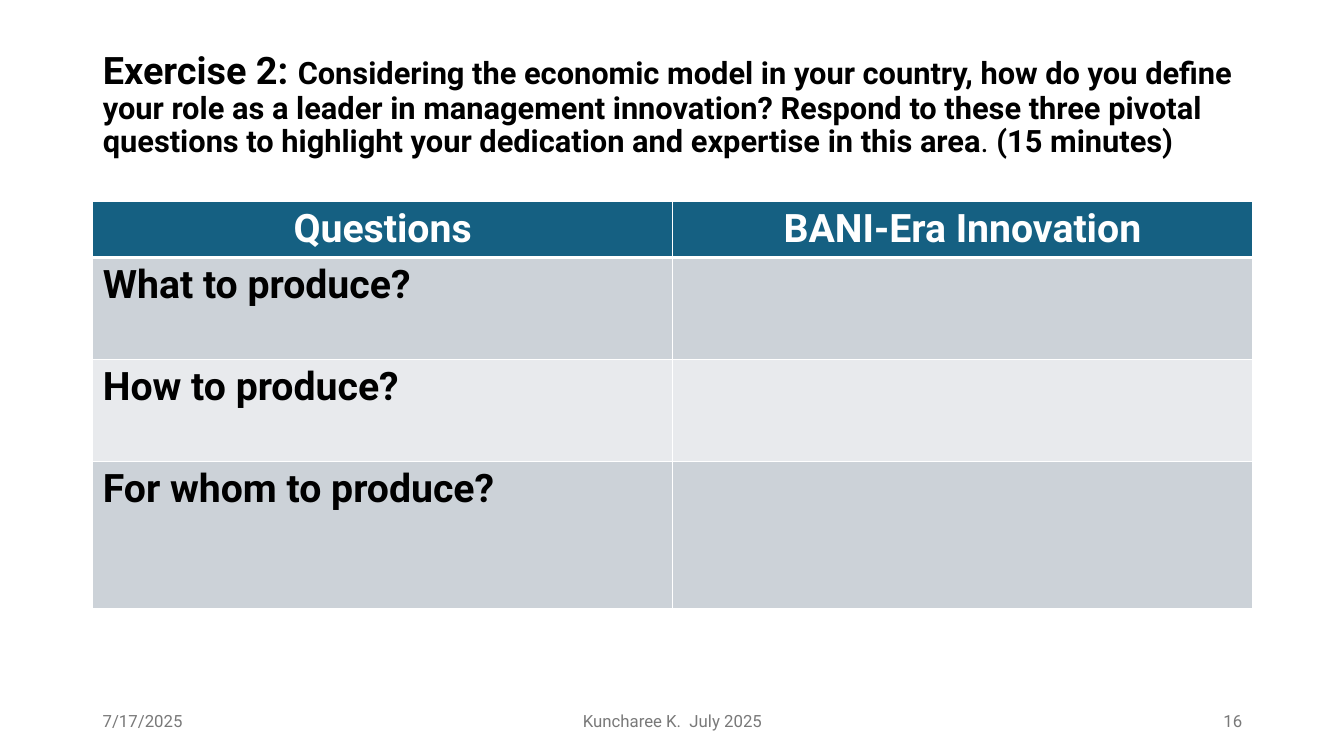
"""Build the exercise slide with its question table and footer line."""
from dataclasses import dataclass

from lxml import etree
from pptx import Presentation
from pptx.dml.color import RGBColor
from pptx.enum.text import MSO_ANCHOR, MSO_AUTO_SIZE, PP_ALIGN
from pptx.oxml.ns import qn
from pptx.util import Inches, Pt

LEFT, CENTER, RIGHT = PP_ALIGN.LEFT, PP_ALIGN.CENTER, PP_ALIGN.RIGHT
MIDDLE = MSO_ANCHOR.MIDDLE
FIXED_SIZE = MSO_AUTO_SIZE.NONE

FONT = "Roboto"
COLORS = {
    "ink": "000000",
    "white": "FFFFFF",
    "header": "156082",
    "band_dark": "CCD2D8",
    "band_light": "E8EAED",
    "footer": "797979",
}
MARGIN, COLUMN, ROW = 0.92, 0.5, 0.1
CONTENT_COLUMNS = 23
HEADER_BORDER, GRID_BORDER = 3, 1


@dataclass(frozen=True)
class Phrase:
    text: str
    size: float
    color: str = "ink"
    bold: bool = True


@dataclass(frozen=True)
class TableRow:
    cells: tuple[str, str]
    rows: float
    fill: str
    color: str = "ink"
    align: PP_ALIGN = LEFT


@dataclass(frozen=True)
class FooterItem:
    text: str
    column: float
    columns: float
    align: PP_ALIGN


EXERCISE = (
    Phrase("Exercise 2: ", 27),
    Phrase(
        "Considering the economic model in your country, how do you define "
        "your role as a leader in management innovation? Respond to these three "
        "pivotal questions to highlight your dedication and expertise in this area",
        22,
    ),
    Phrase(". ", 22, bold=False),
    Phrase("(15 minutes)", 22),
)
QUESTIONS = (
    TableRow(("Questions", "BANI-Era Innovation"), 5.5, "header", "white", CENTER),
    TableRow(("What to produce?", ""), 10.1, "band_dark"),
    TableRow(("How to produce?", ""), 10.1, "band_light"),
    TableRow(("For whom to produce?", ""), 14.6, "band_dark"),
)
FOOTER = (
    FooterItem("7/17/2025", 0, 6, LEFT),
    FooterItem("Kuncharee K.  July 2025", 7, 9, CENTER),
    FooterItem("16", 17, 6, RIGHT),
)


def grid_box(column: float, row: float, columns: float, rows: float) -> tuple:
    """Turn grid units into left, top, width and height."""
    return (
        Inches(MARGIN + column * COLUMN),
        Inches(row * ROW),
        Inches(columns * COLUMN),
        Inches(rows * ROW),
    )


def add_phrase(paragraph, phrase: Phrase) -> None:
    """Append one formatted run."""
    run = paragraph.add_run()
    run.text = phrase.text
    run.font.name = FONT
    run.font.size = Pt(phrase.size)
    run.font.bold = phrase.bold
    run.font.color.rgb = RGBColor.from_string(COLORS[phrase.color])


def add_exercise(slide) -> None:
    """Fill the title placeholder with the exercise."""
    exercise = slide.shapes.title
    exercise.left, exercise.top, exercise.width, exercise.height = grid_box(
        0, 4, CONTENT_COLUMNS, 12.9
    )
    frame = exercise.text_frame
    frame.word_wrap = True
    frame.auto_size = FIXED_SIZE
    frame.vertical_anchor = MIDDLE
    sentence = frame.paragraphs[0]
    sentence.alignment = LEFT
    sentence.line_spacing = 0.9
    for phrase in EXERCISE:
        add_phrase(sentence, phrase)


def set_borders(cell, top: float, bottom: float) -> None:
    """Draw white borders on all four sides of a cell."""
    properties = cell._tc.get_or_add_tcPr()
    widths = {"a:lnL": GRID_BORDER, "a:lnR": GRID_BORDER, "a:lnT": top, "a:lnB": bottom}
    for position, (side, width) in enumerate(widths.items()):
        border = etree.Element(qn(side), w=str(Pt(width)))
        paint = etree.SubElement(border, qn("a:solidFill"))
        etree.SubElement(paint, qn("a:srgbClr"), val=COLORS["white"])
        properties.insert(position, border)


def add_questions(slide) -> None:
    """Add the table of questions."""
    total_rows = sum(entry.rows for entry in QUESTIONS)
    questions = slide.shapes.add_table(
        len(QUESTIONS), 2, *grid_box(0, 20, CONTENT_COLUMNS, total_rows)
    ).table
    for index, entry in enumerate(QUESTIONS):
        questions.rows[index].height = Inches(entry.rows * ROW)
        top = HEADER_BORDER if index == 1 else GRID_BORDER
        bottom = HEADER_BORDER if index == 0 else GRID_BORDER
        for cell, text in zip(questions.rows[index].cells, entry.cells):
            cell.fill.solid()
            cell.fill.fore_color.rgb = RGBColor.from_string(COLORS[entry.fill])
            set_borders(cell, top, bottom)
            if text:
                paragraph = cell.text_frame.paragraphs[0]
                paragraph.alignment = entry.align
                add_phrase(paragraph, Phrase(text, 28, entry.color))


def add_footer_item(slide, item: FooterItem) -> None:
    """Add one part of the footer line."""
    frame = slide.shapes.add_textbox(
        *grid_box(item.column, 69.5, item.columns, 4)
    ).text_frame
    frame.word_wrap = True
    frame.vertical_anchor = MIDDLE
    paragraph = frame.paragraphs[0]
    paragraph.alignment = item.align
    add_phrase(paragraph, Phrase(item.text, 12, "footer", bold=False))


def main() -> None:
    """Build and save the slide."""
    deck = Presentation()
    deck.slide_width, deck.slide_height = Inches(13.33), Inches(7.5)
    slide = deck.slides.add_slide(deck.slide_layouts.get_by_name("Title Only"))
    add_exercise(slide)
    add_questions(slide)
    for item in FOOTER:
        add_footer_item(slide, item)
    deck.save("out.pptx")


if __name__ == "__main__":
    main()
